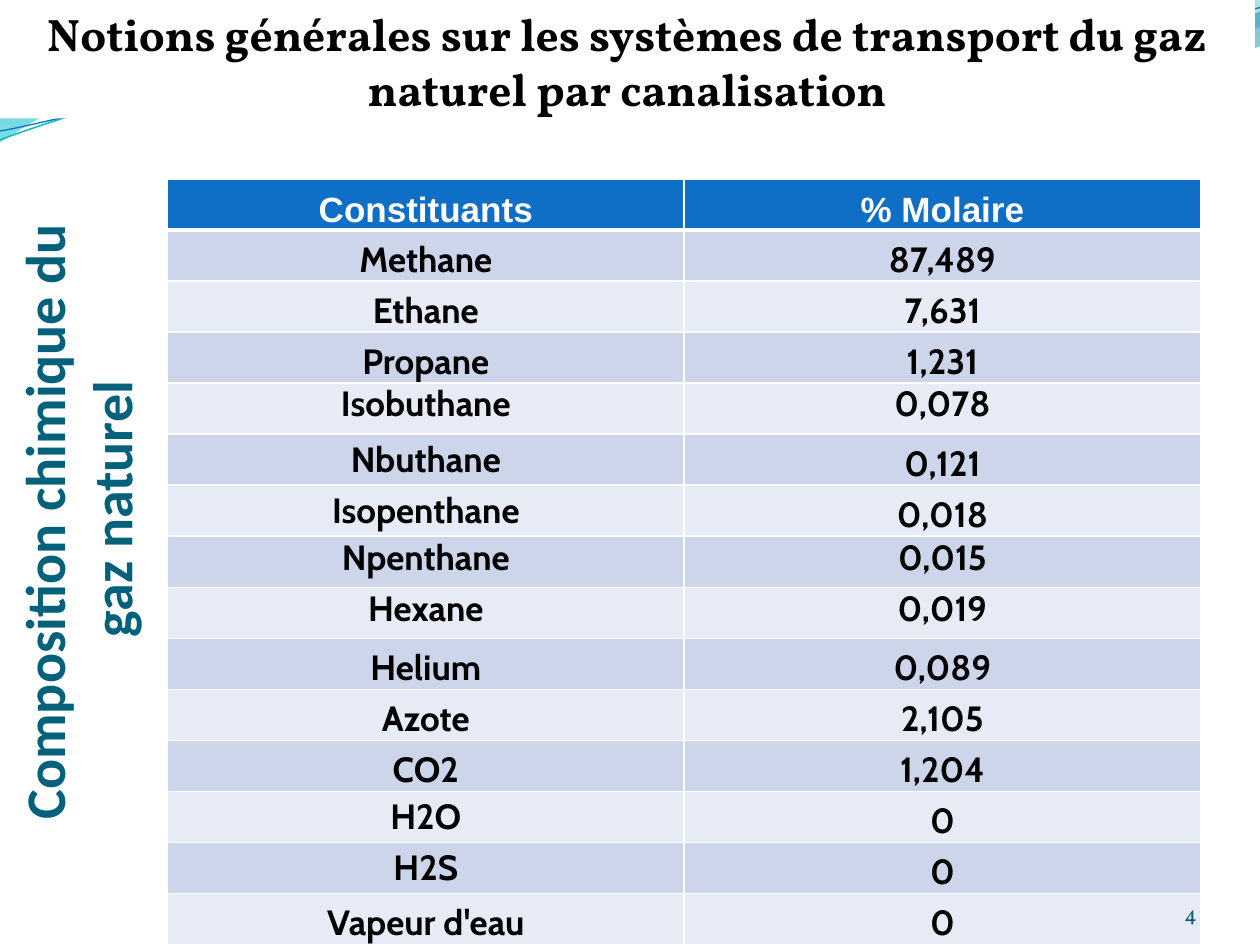
import math

import pptx
import pptx.util
import pptx.dml.color
import pptx.enum.shapes
import pptx.enum.text
import pptx.oxml
import pptx.oxml.ns
from pptx.util import Inches

RGBColor = pptx.dml.color.RGBColor
ANCHOR = pptx.enum.text.MSO_ANCHOR
ALIGN = pptx.enum.text.PP_ALIGN
WHITE = RGBColor(0xFF, 0xFF, 0xFF)
BLACK = RGBColor(0, 0, 0)
BLUE = RGBColor(0x0F, 0x6F, 0xC6)
TEAL = RGBColor(0x04, 0x61, 0x7B)
NUMBER_TEAL = RGBColor(0x04, 0x5D, 0x75)
CYAN = RGBColor(0x0A, 0xB8, 0xBF)
DEEP_BLUE = RGBColor(0x00, 0x74, 0xA1)
AQUA = RGBColor(0x00, 0xC6, 0xCF)
SEA_GREEN = RGBColor(0x00, 0xA1, 0xA9)
SEA_BLUE = RGBColor(0x00, 0x8B, 0xBF)
BANDS = [RGBColor(0xCC, 0xD5, 0xEA), RGBColor(0xE7, 0xEB, 0xF5)]

deck = pptx.Presentation()
deck.slide_width, deck.slide_height = Inches(10), Inches(7.5)
slide = deck.slides.add_slide(deck.slide_layouts[6])


def add_wave(start, segments, closed, center=(0, 0), tilt=0):
    """Draw lines (x, y) and Bézier curves (x1, y1, x2, y2, x, y) in inches, tilted in degrees."""
    cos, sin = math.cos(math.radians(tilt)), math.sin(math.radians(tilt))
    corners = []
    for segment in [start, *segments]:
        for x, y in zip(segment[::2], segment[1::2]):
            across, down = x - center[0], y - center[1]
            corners.append((Inches(center[0] + across * cos + down * sin),
                            Inches(center[1] - across * sin + down * cos)))
    builder = slide.shapes.build_freeform(*corners[0])
    builder.add_line_segments(corners[1:], close=closed)
    wave = builder.convert_to_shape()
    wave.shadow.inherit = False
    wave.rotation = tilt
    # The builder only draws lines: join each three of a curve into one cubic segment
    lines = iter(wave.element.spPr.findall(".//" + pptx.oxml.ns.qn("a:lnTo")))
    for segment in segments:
        first = next(lines)
        if len(segment) == 6:
            curve = pptx.oxml.parse_xml(f'<a:cubicBezTo {pptx.oxml.ns.nsdecls("a")}/>')
            first.addprevious(curve)
            for line in (first, next(lines), next(lines)):
                curve.append(line[0])
                line.getparent().remove(line)
    return wave


def write(frame, text, align, **font_values):
    paragraph = frame.paragraphs[0]
    paragraph.text = text
    paragraph.alignment = align
    for run in paragraph.runs:
        run.font.color.rgb = font_values["color"]
        for name, value in font_values.items():
            if name != "color":
                setattr(run.font, name, value)


# Waves along the top: (start, segments, gradient stops as position, colour, opacity %)
filled_waves = [
    ((0, 0),
     [(4.4, -0.01), (4.76, 0.17, 6.64, 0.63, 7.58, 0.63), (8.53, 0.63, 9.58, 0.26, 10, 0.09),
      (10.01, 0.36), (9.83, 0.44, 8.7, 0.76, 7.46, 0.75), (6.22, 0.75, 3.82, 0.28, 2.57, 0.34),
      (1.29, 0.36, 0.46, 0.83, -0.01, 1.13), (0, 0)],
     [(0, DEEP_BLUE, 45), (1, AQUA, 55)]),
    ((4.79, -0.01),
     [(5.09, 0.11, 6.82, 0.62, 7.69, 0.65), (8.56, 0.69, 9.61, 0.32, 10, 0.21), (10, 0),
      (4.79, -0.01)],
     [(0, SEA_GREEN, 30), (0.8, SEA_BLUE, 45)]),
]
for start, segments, stops in filled_waves:
    wave = add_wave(start, segments, True)
    wave.line.fill.background()
    wave.fill.gradient()
    wave.fill.gradient_angle = 270
    for stop, (position, color, opacity) in zip(wave.fill.gradient_stops, stops):
        stop.position = position
        stop.color.rgb = color
    color_tags = wave.element.spPr.findall(".//" + pptx.oxml.ns.qn("a:srgbClr"))
    for tag, (position, color, opacity) in zip(color_tags, stops):
        tag.append(pptx.oxml.parse_xml(
            f'<a:alpha {pptx.oxml.ns.nsdecls("a")} val="{opacity * 1000}"/>'))

wave_lines = [
    ((0, 1.11),
     [(0.48, 0.93, 1.58, 0.57, 2.77, 0.52), (3.95, 0.47, 5.93, 0.89, 7.13, 0.8),
      (8.33, 0.71, 9.38, 0.15, 9.98, -0.02)], (4.99, 0.58), CYAN, 0.85),
    ((0, 1.04),
     [(0.47, 0.96, 1.64, 0.61, 2.83, 0.56), (4.03, 0.51, 5.97, 0.84, 7.17, 0.75),
      (8.36, 0.67, 9.41, 0.21, 10, 0.06)], (5, 0.59), BLUE, 0.75),
]
for start, segments, center, color, width in wave_lines:
    wave = add_wave(start, segments, False, center, -2.7)
    wave.fill.background()
    wave.line.color.rgb = color
    wave.line.width = pptx.util.Pt(width)

# Vertical title
side_title = slide.shapes.add_textbox(Inches(-2.37), Inches(3.62), Inches(6.08), Inches(0.94))
side_title.rotation = 270
side_frame = side_title.text_frame
for name, value in {"word_wrap": True, "vertical_anchor": ANCHOR.BOTTOM, "margin_left": 0,
                    "margin_right": 0, "margin_top": Inches(0.05), "margin_bottom": 0}.items():
    setattr(side_frame, name, value)
write(side_frame, "Composition chimique du \v gaz naturel", ALIGN.CENTER,
      size=pptx.util.Pt(32), name="Calibri", color=TEAL, bold=True)

# Composition table: each row is name, value, name anchor, value anchor
TOP, MIDDLE, BOTTOM = ANCHOR.TOP, ANCHOR.MIDDLE, ANCHOR.BOTTOM
composition = [
    ("Constituants", "% Molaire", BOTTOM, BOTTOM),
    ("Methane", "87,489", BOTTOM, BOTTOM),
    ("Ethane", "7,631", BOTTOM, BOTTOM),
    ("Propane", "1,231", BOTTOM, BOTTOM),
    ("Isobuthane", "0,078", TOP, TOP),
    ("Nbuthane", "0,121", MIDDLE, BOTTOM),
    ("Isopenthane", "0,018", MIDDLE, BOTTOM),
    ("Npenthane", "0,015", TOP, TOP),
    ("Hexane", "0,019", TOP, TOP),
    ("Helium", "0,089", BOTTOM, BOTTOM),
    ("Azote", "2,105", BOTTOM, BOTTOM),
    ("CO2", "1,204", BOTTOM, BOTTOM),
    ("H2O", "0", MIDDLE, BOTTOM),
    ("H2S", "0", MIDDLE, BOTTOM),
    ("Vapeur d'eau", "0", BOTTOM, BOTTOM),
]
table = slide.shapes.add_table(len(composition), 2, Inches(1.33), Inches(1.42),
                               Inches(8.2), Inches(6.08)).table
for row, (constituent, share, *anchors) in enumerate(composition):
    header = row == 0
    for column, text in enumerate((constituent, share)):
        cell = table.cell(row, column)
        for name, value in {"margin_left": 0, "margin_right": 0, "margin_top": 0,
                            "margin_bottom": 0, "vertical_anchor": anchors[column]}.items():
            setattr(cell, name, value)
        write(cell.text_frame, text, ALIGN.CENTER, size=pptx.util.Pt(20), bold=True,
              name="Arial" if header else "Cabin", color=WHITE if header else BLACK)
        widths = {"L": 1, "R": 1, "T": 3 if row == 1 else 1, "B": 3 if header else 1}
        for side, width in widths.items():
            cell._tc.get_or_add_tcPr().append(pptx.oxml.parse_xml(
                f'<a:ln{side} {pptx.oxml.ns.nsdecls("a")} w="{pptx.util.Pt(width)}">'
                f'<a:solidFill><a:srgbClr val="{WHITE}"/></a:solidFill></a:ln{side}>'))
        cell.fill.solid()
        cell.fill.fore_color.rgb = BLUE if header else BANDS[(row - 1) % 2]

# Heading band
heading = slide.shapes.add_shape(pptx.enum.shapes.MSO_SHAPE.RECTANGLE,
                                 0, 0, Inches(9.96), Inches(0.94))
heading.shadow.inherit = False
heading.fill.solid()
heading.fill.fore_color.rgb = WHITE
heading.line.fill.background()
heading.text_frame.word_wrap = True
heading.text_frame.vertical_anchor = TOP
heading.text_frame.paragraphs[0].space_before = pptx.util.Pt(5)
write(heading.text_frame,
      "Notions générales sur les systèmes de transport du gaz naturel par canalisation",
      ALIGN.CENTER, size=pptx.util.Pt(26), name="Vollkorn", color=BLACK, bold=True)

# Slide number
number_frame = slide.shapes.add_textbox(Inches(8.67), Inches(6.95),
                                        Inches(0.83), Inches(0.4)).text_frame
for name, value in {"word_wrap": True, "vertical_anchor": BOTTOM, "margin_left": 0,
                    "margin_right": 0, "margin_top": 0, "margin_bottom": 0}.items():
    setattr(number_frame, name, value)
write(number_frame, "4", ALIGN.RIGHT, size=pptx.util.Pt(12), name="Vollkorn", color=NUMBER_TEAL)

deck.save("out.pptx")
